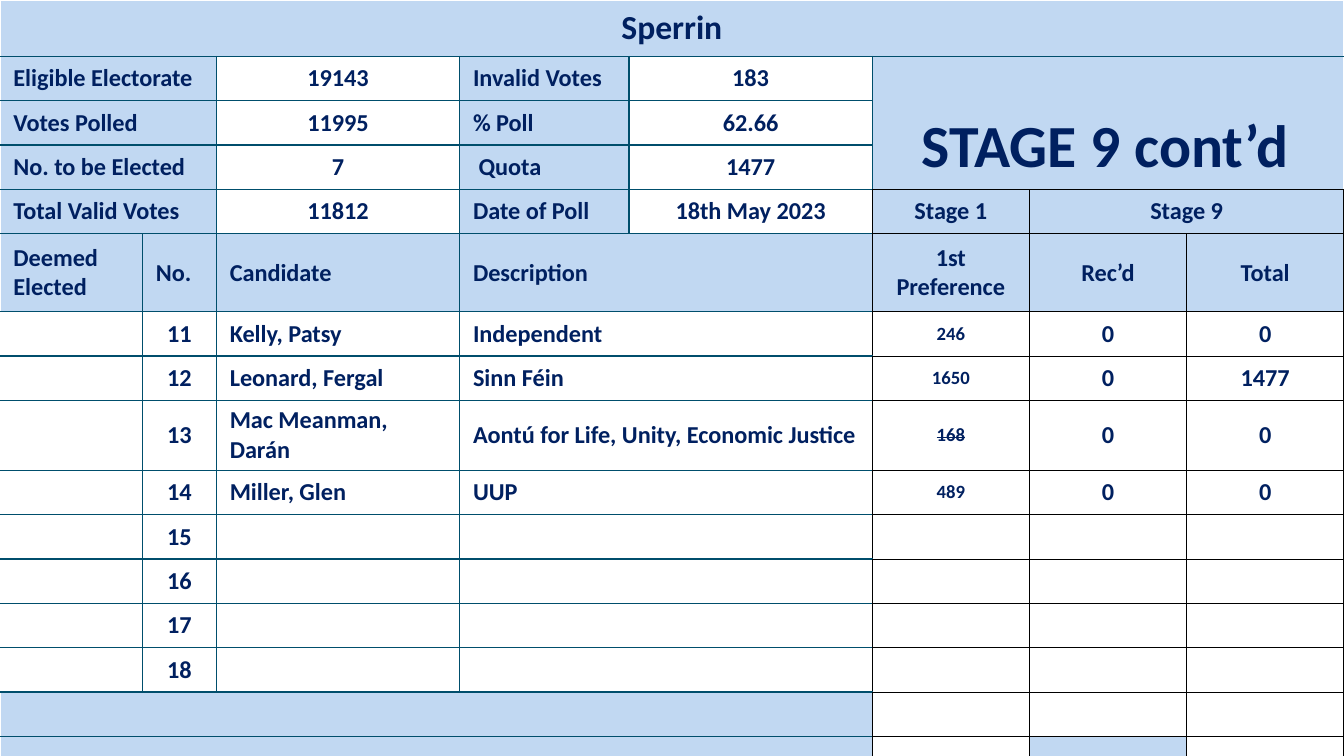
"""Build the Sperrin election count slide as one bordered results table."""

from dataclasses import dataclass

import lxml.etree
import pptx
import pptx.dml.color
import pptx.enum.text
import pptx.oxml.ns
import pptx.table
import pptx.util

RGB = pptx.dml.color.RGBColor.from_string
ALIGN = pptx.enum.text.PP_ALIGN
ANCHOR = pptx.enum.text.MSO_ANCHOR
Inches = pptx.util.Inches


@dataclass(frozen=True)
class Theme:
    font: str = "Calibri"
    ink: str = "002060"
    panel: str = "C1D8F2"
    paper: str = "FFFFFF"
    rule: str = "004E6C"
    grid: str = "000000"
    sky_dark: str = "0D3868"
    sky_light: str = "8ADFFF"
    title_size: float = 18
    stage_size: float = 32
    body_size: float = 13
    small_size: float = 10


THEME = Theme()


@dataclass(frozen=True)
class Border:
    color: str
    width: float


@dataclass(frozen=True)
class Entry:
    row: int
    column: int
    text: str = ""
    columns: int = 1
    rows: int = 1
    shaded: bool = False
    centered: bool = True
    size: float = THEME.body_size
    struck: bool = False
    anchor: ANCHOR = ANCHOR.MIDDLE


@dataclass(frozen=True)
class Candidate:
    number: int
    name: str = ""
    party: str = ""
    first_preference: str = ""
    received: str = ""
    total: str = ""
    struck: bool = False


WHITE = Border(THEME.paper, 1)
TEAL = Border(THEME.rule, 0.75)
BLACK = Border(THEME.grid, 0.5)

SLIDE_WIDTH = Inches(10)
SLIDE_HEIGHT = SLIDE_WIDTH * 9 // 16
COLUMN_WIDTHS = (1.06, 0.55, 1.81, 1.26, 1.81, 1.17, 1.17, 1.17)
ROW_HEIGHTS = (0.42, *[0.33] * 4, 0.58, *[0.33] * 10)
STAGE_ROW, HEADER_ROW, FIRST_CANDIDATE_ROW = 4, 5, 6
STAGE_COLUMN, LAST_COLUMN = 5, 7
LAST_ROW = len(ROW_HEIGHTS) - 1

SUMMARY = (
    ("Eligible Electorate", "19143", "Invalid Votes", "183"),
    ("Votes Polled", "11995", "% Poll", "62.66"),
    ("No. to be Elected", "7", "\u00a0Quota", "1477"),
    ("Total Valid Votes", "11812", "Date of Poll", "18th May 2023"),
)
CANDIDATES = (
    Candidate(11, "Kelly, Patsy", "Independent", "246", "0", "0"),
    Candidate(12, "Leonard, Fergal", "Sinn Féin", "1650", "0", "1477"),
    Candidate(13, "Mac Meanman, Darán", "Aontú for Life, Unity, Economic Justice",
              "168", "0", "0", struck=True),
    Candidate(14, "Miller, Glen", "UUP", "489", "0", "0"),
    *(Candidate(number) for number in range(15, 19)),
)


def heading_entries() -> list[Entry]:
    """List the title, summary and column heading cells."""
    entries = [
        Entry(0, 0, "Sperrin", columns=8, shaded=True, size=THEME.title_size),
        Entry(1, 5, "STAGE 9\u00a0cont’d", columns=3, rows=3, shaded=True,
              size=THEME.stage_size, anchor=ANCHOR.BOTTOM),
        Entry(STAGE_ROW, 5, "Stage 1", shaded=True),
        Entry(STAGE_ROW, 6, "Stage 9", columns=2, shaded=True),
        Entry(HEADER_ROW, 3, "Description", columns=2, shaded=True, centered=False),
    ]
    for row, (label, value, second_label, second_value) in enumerate(SUMMARY, 1):
        entries += [
            Entry(row, 0, label, columns=2, shaded=True, centered=False),
            Entry(row, 2, value),
            Entry(row, 3, second_label, shaded=True, centered=False),
            Entry(row, 4, second_value),
        ]
    for column, text in enumerate(("Deemed Elected", "No.", "Candidate")):
        entries.append(Entry(HEADER_ROW, column, text, shaded=True, centered=False))
    for column, text in enumerate(("1st Preference", "Rec’d", "Total"), STAGE_COLUMN):
        entries.append(Entry(HEADER_ROW, column, text, shaded=True))
    return entries


def candidate_entries() -> list[Entry]:
    """List the candidate cells and the two closing rows."""
    entries = []
    for row, candidate in enumerate(CANDIDATES, FIRST_CANDIDATE_ROW):
        entries += [
            Entry(row, 0),
            Entry(row, 1, str(candidate.number)),
            Entry(row, 2, candidate.name, centered=False),
            Entry(row, 3, candidate.party, columns=2, centered=False),
            Entry(row, 5, candidate.first_preference, size=THEME.small_size,
                  struck=candidate.struck),
            Entry(row, 6, candidate.received),
            Entry(row, 7, candidate.total),
        ]
    for row in (LAST_ROW - 1, LAST_ROW):
        entries.append(Entry(row, 0, columns=5, shaded=True))
        for column in range(STAGE_COLUMN, LAST_COLUMN + 1):
            entries.append(Entry(row, column, shaded=(row, column) == (LAST_ROW, 6)))
    return entries


def cell_borders(entry: Entry) -> dict[str, Border]:
    """Choose the four borders from the cell's place in the table."""
    last_column = entry.column + entry.columns - 1
    in_stages = entry.column >= STAGE_COLUMN
    below_title = entry.row >= STAGE_ROW
    left = WHITE if entry.column == 0 else BLACK if in_stages and below_title else TEAL
    if last_column == LAST_COLUMN and not below_title:
        right = WHITE
    else:
        right = BLACK if last_column >= STAGE_COLUMN - 1 and below_title else TEAL
    top = WHITE if entry.row == 0 else BLACK if in_stages and below_title else TEAL
    if entry.row == LAST_ROW and not in_stages:
        bottom = WHITE
    else:
        bottom = BLACK if in_stages else TEAL
    return {"a:lnL": left, "a:lnR": right, "a:lnT": top, "a:lnB": bottom}


def draw_borders(cell: pptx.table._Cell, borders: dict[str, Border]) -> None:
    """Add solid border lines to a cell."""
    properties = cell._tc.get_or_add_tcPr()
    for tag, border in borders.items():
        line = lxml.etree.SubElement(properties, pptx.oxml.ns.qn(tag),
                                     w=str(pptx.util.Pt(border.width)))
        fill = lxml.etree.SubElement(line, pptx.oxml.ns.qn("a:solidFill"))
        lxml.etree.SubElement(fill, pptx.oxml.ns.qn("a:srgbClr"), val=border.color)


def draw_entry(table: pptx.table.Table, entry: Entry) -> None:
    """Merge, border, fill and letter one table cell."""
    cell = table.cell(entry.row, entry.column)
    if entry.columns * entry.rows > 1:
        cell.merge(table.cell(entry.row + entry.rows - 1, entry.column + entry.columns - 1))
    draw_borders(cell, cell_borders(entry))
    cell.fill.solid()
    cell.fill.fore_color.rgb = RGB(THEME.panel if entry.shaded else THEME.paper)
    cell.vertical_anchor = entry.anchor
    cell.margin_left = cell.margin_right = Inches(0.1)
    cell.margin_top = cell.margin_bottom = Inches(0.04)
    paragraph = cell.text_frame.paragraphs[0]
    paragraph.alignment = ALIGN.CENTER if entry.centered else ALIGN.LEFT
    paragraph.font.name = THEME.font
    paragraph.font.size = pptx.util.Pt(entry.size)
    paragraph.font.bold = True
    paragraph.font.color.rgb = RGB(THEME.ink)
    if not entry.text:
        lxml.etree.SubElement(paragraph._p, pptx.oxml.ns.qn("a:endParaRPr"),
                              sz=str(int(entry.size * 100)))
        return
    run = paragraph.add_run()
    run.text = entry.text
    if entry.struck:
        run._r.get_or_add_rPr().set("strike", "sngStrike")
    if entry.size == THEME.stage_size:
        space = paragraph.add_run()
        space.text = "\u00a0"
        space.font.size = pptx.util.Pt(THEME.body_size)


def main() -> None:
    """Build and save the presentation."""
    presentation = pptx.Presentation()
    presentation.slide_width, presentation.slide_height = SLIDE_WIDTH, SLIDE_HEIGHT
    slide = presentation.slides.add_slide(presentation.slide_layouts[6])
    background = slide.background.fill
    background.gradient()
    background.gradient_angle = 258
    stops = ((0.42, THEME.sky_dark), (0.82, THEME.sky_light))
    for stop, (position, color) in zip(background.gradient_stops, stops):
        stop.position, stop.color.rgb = position, RGB(color)
    table = slide.shapes.add_table(len(ROW_HEIGHTS), len(COLUMN_WIDTHS), 0, 0,
                                   SLIDE_WIDTH, Inches(sum(ROW_HEIGHTS))).table
    table.first_row = table.horz_banding = False
    for column, width in zip(table.columns, COLUMN_WIDTHS):
        column.width = Inches(width)
    for row, height in zip(table.rows, ROW_HEIGHTS):
        row.height = Inches(height)
    for entry in heading_entries() + candidate_entries():
        draw_entry(table, entry)
    presentation.save("out.pptx")


if __name__ == "__main__":
    main()
